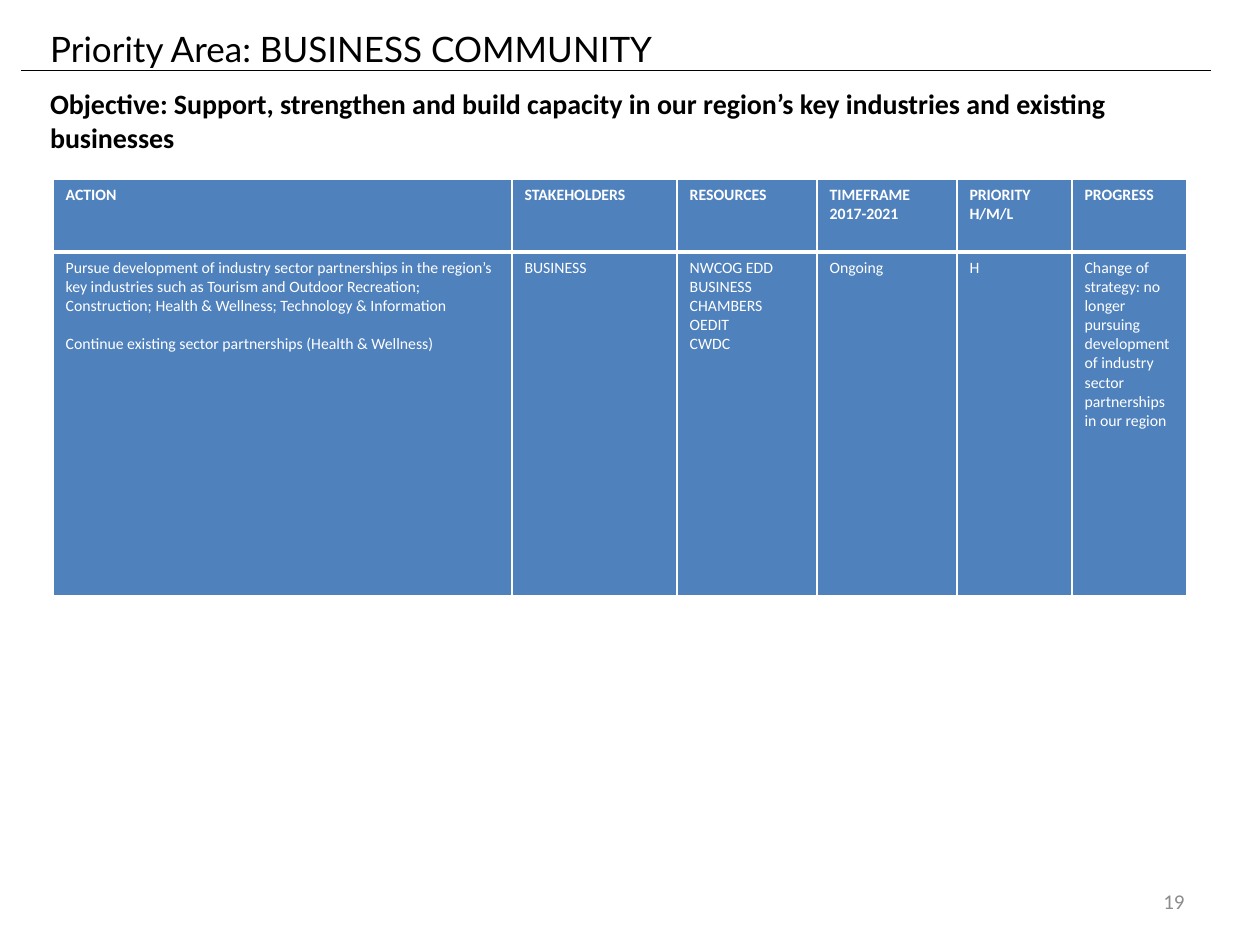
from lxml import etree
from pptx import Presentation
from pptx.dml.color import RGBColor
from pptx.enum.shapes import MSO_CONNECTOR
from pptx.enum.text import MSO_ANCHOR, PP_ALIGN
from pptx.oxml.ns import qn
from pptx.util import Cm, Pt

STRAIGHT = MSO_CONNECTOR.STRAIGHT
MIDDLE = MSO_ANCHOR.MIDDLE
LEFT, RIGHT = PP_ALIGN.LEFT, PP_ALIGN.RIGHT

COLORS = {"ink": "000000", "cell": "4F81BD", "light": "FFFFFF", "number": "8C8C8C"}

PRIORITY_AREA = "Priority Area: BUSINESS COMMUNITY"
OBJECTIVE = ("Objective: Support, strengthen and build capacity in our region’s "
             "key industries and existing businesses")
PAGE_NUMBER = "19"

PLAN = [
    {"heading": ["ACTION"], "width": 9.25, "gap": 11, "body": [
        "Pursue development of industry sector partnerships in the region’s key "
        "industries such as Tourism and Outdoor Recreation; Construction; "
        "Health & Wellness; Technology & Information",
        "Continue existing sector partnerships (Health & Wellness)"]},
    {"heading": ["STAKEHOLDERS"], "width": 3.33, "gap": 0, "body": ["BUSINESS"]},
    {"heading": ["RESOURCES"], "width": 2.82, "gap": 0,
     "body": ["NWCOG EDD", "BUSINESS", "CHAMBERS", "OEDIT", "CWDC"]},
    {"heading": ["TIMEFRAME", "2017-2021"], "width": 2.82, "gap": 0, "body": ["Ongoing"]},
    {"heading": ["PRIORITY", "H/M/L"], "width": 2.32, "gap": 0, "body": ["H"]},
    {"heading": ["PROGRESS"], "width": 2.32, "gap": 0, "body": [
        "Change of strategy: no longer pursuing development of industry sector "
        "partnerships in our region"]},
]
ROW_HEIGHTS = [1.47, 6.93]
BORDERS = [
    {"lnL": 1, "lnR": 1, "lnT": 1, "lnB": 3},
    {"lnL": 1, "lnR": 1, "lnT": 3, "lnB": 1},
]


def rgb(name):
    return RGBColor.from_string(COLORS[name])


def write(frame, lines, size, color, font="Calibri", bold=False, gap=0, align=LEFT):
    for i, line in enumerate(lines):
        paragraph = frame.paragraphs[0] if i == 0 else frame.add_paragraph()
        paragraph.text = line
        paragraph.alignment = align
        if i and gap:
            paragraph.space_before = Pt(gap)
        style_font(paragraph, size, color, font, bold)


def style_font(paragraph, size, color, font="Calibri", bold=False):
    paragraph.font.name = font
    paragraph.font.size = Pt(size)
    paragraph.font.bold = bold
    paragraph.font.color.rgb = rgb(color)


def add_text_frame(slide, left, top, width, height):
    frame = slide.shapes.add_textbox(Cm(left), Cm(top), Cm(width), Cm(height)).text_frame
    frame.word_wrap = True
    return frame


def set_borders(cell, widths):
    properties = cell._tc.get_or_add_tcPr()
    for position, (side, width) in enumerate(widths.items()):
        border = etree.Element(qn(f"a:{side}"), w=str(Pt(width)))
        fill = etree.SubElement(border, qn("a:solidFill"))
        etree.SubElement(fill, qn("a:srgbClr"), val=COLORS["light"])
        properties.insert(position, border)


def add_plan(slide):
    total_width = sum(column["width"] for column in PLAN)
    table = slide.shapes.add_table(len(ROW_HEIGHTS), len(PLAN), Cm(1.07), Cm(3.61),
                                   Cm(total_width), Cm(sum(ROW_HEIGHTS))).table
    for row, height in zip(table.rows, ROW_HEIGHTS):
        row.height = Cm(height)
    for c, column in enumerate(PLAN):
        table.columns[c].width = Cm(column["width"])
        for r, part in enumerate(("heading", "body")):
            cell = table.cell(r, c)
            cell.fill.solid()
            cell.fill.fore_color.rgb = rgb("cell")
            set_borders(cell, BORDERS[r])
            write(cell.text_frame, column[part], 9, "light",
                  bold=part == "heading", gap=column["gap"])


def main():
    deck = Presentation()
    deck.slide_width, deck.slide_height = Cm(25.4), Cm(19.05)
    slide = deck.slides.add_slide(deck.slide_layouts[6])

    header = add_text_frame(slide, 0.76, 0.43, 23.57, 4.27)
    write(header, [PRIORITY_AREA, OBJECTIVE], 16, "ink", bold=True, gap=10)
    style_font(header.paragraphs[0], 20, "ink", "Lato")

    add_plan(slide)

    rule = slide.shapes.add_connector(STRAIGHT, Cm(0.43), Cm(1.42), Cm(24.41), Cm(1.42))
    rule.line.color.rgb = rgb("ink")
    rule.line.width = Pt(0.75)
    etree.SubElement(rule._element.spPr, qn("a:effectLst"))

    footer = add_text_frame(slide, 18.21, 17.65, 5.92, 1.02)
    footer.vertical_anchor = MIDDLE
    write(footer, [PAGE_NUMBER], 12, "number", align=RIGHT)

    deck.save("out.pptx")


if __name__ == "__main__":
    main()
